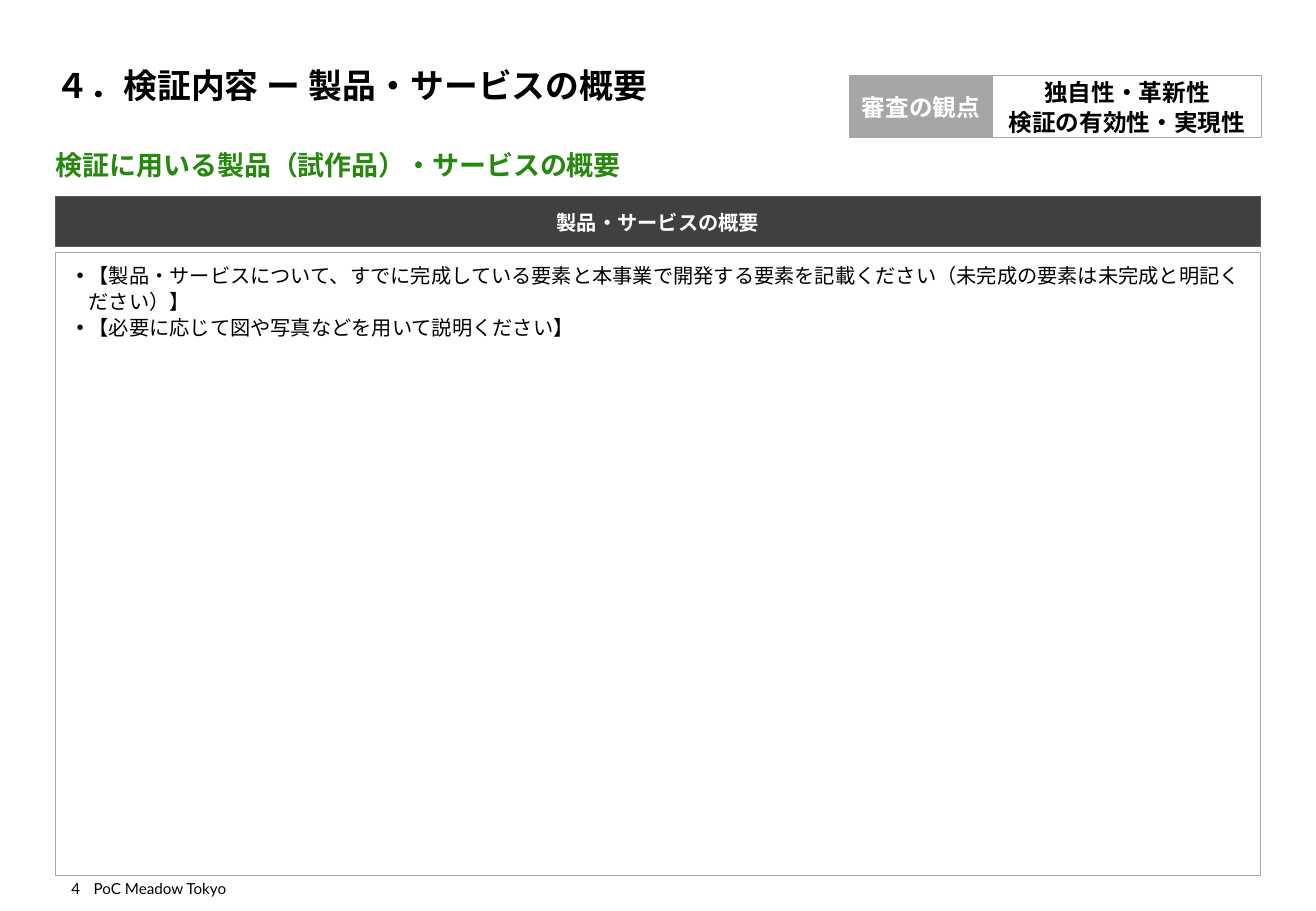
"""Build the product and service overview slide."""
from pptx import Presentation
from pptx.dml.color import RGBColor
from pptx.enum.lang import MSO_LANGUAGE_ID
from pptx.enum.shapes import MSO_SHAPE
from pptx.enum.text import MSO_ANCHOR, PP_ALIGN
from pptx.oxml.ns import qn
from pptx.util import Inches, Pt
from lxml.etree import SubElement

TITLE = "４．検証内容 ー 製品・サービスの概要"
LEAD = "検証に用いる製品（試作品）・サービスの概要"
HEAD = "製品・サービスの概要"
NOTES = [
    ("【製品・サービスについて、すでに完成している要素と本事業で開発する要素を"
     "記載ください（未完成の要素は未完成と明記ください）】", "Lato"),
    ("【必要に応じて図や写真などを用いて説明ください】", "Calibri"),
]
LABEL = "審査の観点"
POINTS = ["独自性・革新性", "検証の有効性・実現性"]
PAGE = "4"
FOOTER = "PoC Meadow Tokyo"

BLACK = RGBColor(0, 0, 0)
WHITE = RGBColor(255, 255, 255)
GREEN = RGBColor(0x26, 0x89, 0x0D)
DARK = RGBColor(0x40, 0x40, 0x40)
EDGE = RGBColor(0x59, 0x59, 0x59)
GRAY = RGBColor(0xA6, 0xA6, 0xA6)
FRAME = RGBColor(0xA7, 0xA8, 0xAA)
NOTO = "Noto Sans CJK JP"

LEFT, WIDTH = 0.46, 9.91
TAG_TOP, TAG_TALL = 0.62, 0.51
TAG_LEFT, TAG_WIDE = 6.99, 1.18
FOOT_TOP, FOOT_TALL = 7.2, 0.19

deck = Presentation()
deck.slide_width, deck.slide_height = Inches(10.83), Inches(7.5)
slide = deck.slides.add_slide(deck.slide_layouts[6])


def add_text(lines, spot, size=12, face="Lato", color=BLACK, bold=False,
             align=PP_ALIGN.LEFT, anchor=MSO_ANCHOR.MIDDLE, fill=None,
             edge=None, bullet=False, wrap=True):
    """Add a box of text, framed and filled if a fill is given."""
    place = [Inches(n) for n in spot]
    if fill is None:
        box = slide.shapes.add_textbox(*place)
    else:
        box = slide.shapes.add_shape(MSO_SHAPE.RECTANGLE, *place)
        box.shadow.inherit = False
        box.fill.solid()
        box.fill.fore_color.rgb = fill
        box.line.color.rgb = edge
        box.line.width = Pt(0.5)
    frame = box.text_frame
    frame.word_wrap = wrap
    frame.vertical_anchor = anchor
    pad = Inches(0 if fill is None else 0.08)
    frame.margin_left = frame.margin_right = pad
    frame.margin_top = frame.margin_bottom = pad
    for i, line in enumerate(lines):
        words, font = line if isinstance(line, tuple) else (line, face)
        para = frame.paragraphs[0] if i == 0 else frame.add_paragraph()
        para.alignment = align
        if fill is not None:
            para.line_spacing = 1.06
        if bullet:
            props = para._p.get_or_add_pPr()
            props.set("marL", str(Inches(0.19)))
            props.set("indent", str(Inches(-0.1)))
            SubElement(props, qn("a:buFont")).set("typeface", "Arial")
            SubElement(props, qn("a:buChar")).set("char", "•")
        run = para.add_run()
        run.text = words
        run.font.size = Pt(size)
        run.font.bold = bold
        run.font.color.rgb = color
        run.font.name = font
        run.font.language_id = MSO_LANGUAGE_ID.JAPANESE
        SubElement(run._r.get_or_add_rPr(), qn("a:ea")).set("typeface", font)


add_text([FOOTER], (0.77, FOOT_TOP, 4.45, FOOT_TALL), size=9,
         anchor=MSO_ANCHOR.BOTTOM)
add_text([PAGE], (LEFT, FOOT_TOP, 0.2, FOOT_TALL), size=9,
         align=PP_ALIGN.RIGHT, anchor=MSO_ANCHOR.BOTTOM, wrap=False)
add_text([LEAD], (LEFT, 1.1, 5.28, 0.51), size=16, color=GREEN, bold=True)
add_text([TITLE], (LEFT, 0.2, WIDTH, 0.67), size=20, bold=True,
         anchor=MSO_ANCHOR.BOTTOM)
add_text(NOTES, (LEFT, 2.08, WIDTH, 5.13), anchor=MSO_ANCHOR.TOP,
         fill=WHITE, edge=FRAME, bullet=True)
add_text([HEAD], (LEFT, 1.62, WIDTH, 0.41), face=NOTO, color=WHITE, bold=True,
         align=PP_ALIGN.CENTER, fill=DARK, edge=EDGE)
add_text(POINTS, (TAG_LEFT + TAG_WIDE, TAG_TOP, 2.21, TAG_TALL), size=14,
         face=NOTO, bold=True, align=PP_ALIGN.CENTER, fill=WHITE, edge=GRAY)
add_text([LABEL], (TAG_LEFT, TAG_TOP, TAG_WIDE, TAG_TALL), size=14, face=NOTO,
         color=WHITE, bold=True, align=PP_ALIGN.CENTER, fill=GRAY, edge=GRAY)

deck.save("out.pptx")
